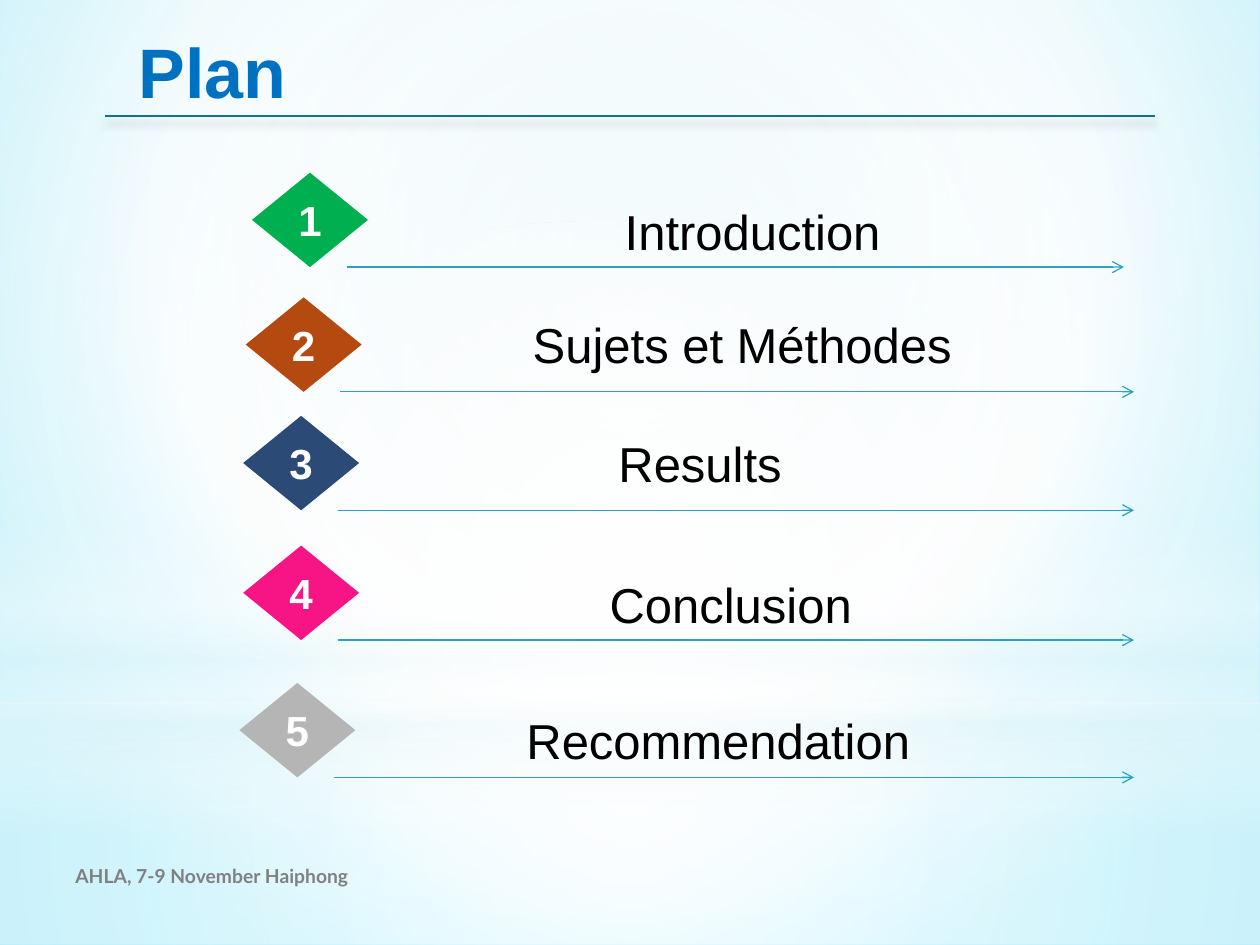
from lxml import etree
from pptx import Presentation
from pptx.dml.color import RGBColor
from pptx.enum.shapes import MSO_CONNECTOR, MSO_SHAPE
from pptx.enum.text import MSO_ANCHOR, PP_ALIGN
from pptx.oxml.ns import qn
from pptx.util import Inches, Pt

STRAIGHT = MSO_CONNECTOR.STRAIGHT
DIAMOND, RECTANGLE, OVAL = MSO_SHAPE.DIAMOND, MSO_SHAPE.RECTANGLE, MSO_SHAPE.OVAL
TOP, MIDDLE = MSO_ANCHOR.TOP, MSO_ANCHOR.MIDDLE
LEFT, CENTER = PP_ALIGN.LEFT, PP_ALIGN.CENTER

THEME = {
    "title": dict(size=40, font="Arial", color="0070C0", bold=True),
    "number": dict(size=24, font="Arial", color="FFFFFF", bold=True),
    "topic": dict(size=28, font="Arial", color="000000", bold=False),
    "footer": dict(size=11, font="Lato", color="808080", bold=True),
    "rule": "12728A",
    "arrow": "2DA2BF",
}

TITLE = "Plan"
FOOTER = "AHLA, 7-9 November Haiphong"
# topic, diamond colour, diamond left and top, arrow end, label left, top and width
TOPICS = [
    ("Introduction", "00B050", (2, 1.37), 8.92, (4.86, 1.55, 2.32)),
    ("Sujets et Méthodes", "B54A10", (1.95, 2.36), 9, (4.13, 2.45, 3.57)),
    ("Results", "2B4A76", (1.93, 3.3), 9, (4.81, 3.39, 1.62)),
    ("Conclusion", "F71586", (1.93, 4.33), 9, (4.74, 4.51, 2.26)),
    ("Recommendation", "B5B5B5", (1.9, 5.42), 9, (4.08, 5.59, 3.4)),
]
DIAMOND_SIZE = (0.92, 0.75)
ARROW_OFFSET = 0.75
LABEL_HEIGHT = 0.57

# Gradient stops are (position %, colour, opacity %)
CENTRE = (50, 50, 50, 50)
BACKGROUND = [(0, "CDEFF7", 100), (60, "FFFFFF", 100), (100, "7CE7FF", 100)]
BACKGROUND_FOCUS = (20, 10, 20, 60)
GLOWS = [
    (RECTANGLE, (0, 5.58, 10, 1.92), CENTRE,
     [(0, "FFFFFF", 91), (37, "FFFFFF", 76), (100, "DEF5FA", 79)]),
    (RECTANGLE, (0, 0, 10, 5.58), CENTRE,
     [(0, "FFFFFF", 89), (48, "FFFFFF", 62), (100, "DEF5FA", 79)]),
    (RECTANGLE, (0, 4.12, 10, 2.5), None,
     [(0, "FFFFFF", 0), (29, "FFFFFF", 30), (45, "DEF5FA", 40),
      (55, "FFFFFF", 26), (65, "DEF5FA", 60), (100, "FFFFFF", 0)]),
    (OVAL, (0, 1.75, 10, 5.58), CENTRE,
     [(0, "FFFFFF", 100), (56, "FFFFFF", 0)]),
]


def inches(values):
    return [Inches(value) for value in values]


def add_xml(parent, tag, **attributes):
    return etree.SubElement(parent, qn(tag), attributes)


def add_color(parent, color, opacity):
    node = add_xml(parent, "a:srgbClr", val=color)
    add_xml(node, "a:alpha", val=str(opacity * 1000))


def set_gradient(fill, element, stops, focus):
    """Radial around the focus rectangle, or top to bottom when focus is None."""
    fill.solid()
    solid = element.find(".//" + qn("a:solidFill"))
    gradient = etree.Element(qn("a:gradFill"), rotWithShape="1")
    stop_list = add_xml(gradient, "a:gsLst")
    for position, color, opacity in stops:
        stop = add_xml(stop_list, "a:gs", pos=str(position * 1000))
        add_color(stop, color, opacity)
    if focus:
        radial = add_xml(gradient, "a:path", path="circle")
        sides = {side: str(value * 1000) for side, value in zip("ltrb", focus)}
        add_xml(radial, "a:fillToRect", **sides)
    else:
        add_xml(gradient, "a:lin", ang="5400000", scaled="0")
    solid.getparent().replace(solid, gradient)


def add_plain_shape(slide, kind, box):
    shape = slide.shapes.add_shape(kind, *inches(box))
    shape.shadow.inherit = False
    shape.line.fill.background()
    return shape


def write(shape, text, style, align=LEFT, anchor=TOP, wrap=True):
    frame = shape.text_frame
    frame.word_wrap = wrap
    frame.vertical_anchor = anchor
    paragraph = frame.paragraphs[0]
    paragraph.alignment = align
    run = paragraph.add_run()
    run.text = text
    font = run.font
    font.size, font.name, font.bold = Pt(style["size"]), style["font"], style["bold"]
    font.color.rgb = RGBColor.from_string(style["color"])


def add_line(slide, start, end, color, width):
    """Return the line and its empty effect list."""
    line = slide.shapes.add_connector(STRAIGHT, *inches(start + end))
    line.line.color.rgb = RGBColor.from_string(color)
    line.line.width = Pt(width)
    return line, add_xml(line._element.spPr, "a:effectLst")


def add_title(slide):
    rule, effects = add_line(slide, (0.83, 0.92), (9.17, 0.92), THEME["rule"], 1.25)
    shadow = add_xml(effects, "a:outerShdw", blurRad=str(Pt(5)), dist=str(Pt(4)),
                     dir="5400000", rotWithShape="0")
    add_color(shadow, "000000", 20)
    title = slide.shapes.title
    title.left, title.top, title.width, title.height = inches((1, 0.18, 1.39, 0.77))
    write(title, TITLE, THEME["title"], wrap=False)


def add_topic(slide, number, topic, color, corner, arrow_end, label_box):
    diamond = add_plain_shape(slide, DIAMOND, corner + DIAMOND_SIZE)
    diamond.fill.solid()
    diamond.fill.fore_color.rgb = RGBColor.from_string(color)
    write(diamond, str(number), THEME["number"], CENTER, MIDDLE)

    left, top = corner
    arrow_y = top + DIAMOND_SIZE[1]
    arrow, _ = add_line(slide, (left + ARROW_OFFSET, arrow_y), (arrow_end, arrow_y),
                        THEME["arrow"], 0.75)
    add_xml(arrow.line._get_or_add_ln(), "a:tailEnd", type="arrow")

    label = slide.shapes.add_textbox(*inches(label_box + (LABEL_HEIGHT,)))
    write(label, topic, THEME["topic"])


def main():
    deck = Presentation()
    deck.slide_width, deck.slide_height = Inches(10), Inches(7.5)
    slide = deck.slides.add_slide(deck.slide_layouts[5])

    set_gradient(slide.background.fill, slide._element, BACKGROUND, BACKGROUND_FOCUS)
    for kind, box, focus, stops in GLOWS:
        glow = add_plain_shape(slide, kind, box)
        set_gradient(glow.fill, glow._element, stops, focus)

    # The title is the first shape on the slide; bring it above the glows.
    slide.shapes._spTree.append(slide.shapes.title._element)
    add_title(slide)
    for number, topic in enumerate(TOPICS, start=1):
        add_topic(slide, number, *topic)

    footer = slide.shapes.add_textbox(*inches((0.5, 6.75, 3.67, 0.4)))
    write(footer, FOOTER, THEME["footer"], anchor=MIDDLE)
    deck.save("out.pptx")


if __name__ == "__main__":
    main()
